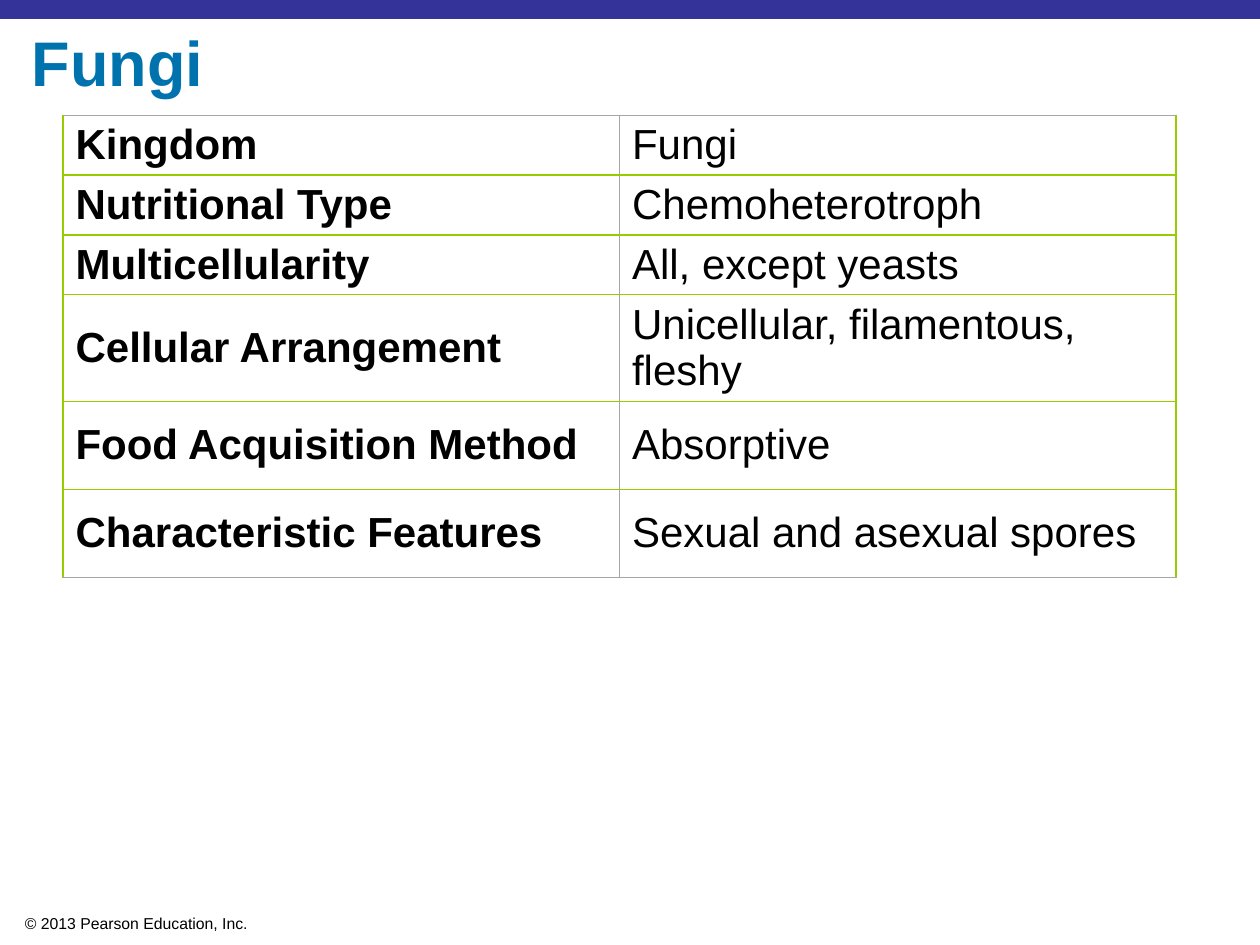
"""Build the Fungi slide: a top band, a title, a two-column table and a copyright line."""
from lxml.etree import SubElement
from pptx import Presentation
from pptx.dml.color import RGBColor
from pptx.enum.shapes import MSO_SHAPE
from pptx.enum.text import MSO_ANCHOR
from pptx.oxml.ns import qn
from pptx.util import Pt

PX = 914400 / 126
BAND = RGBColor(0x33, 0x33, 0x99)
BLUE = RGBColor(0x00, 0x73, 0xAE)
BLACK = RGBColor(0x00, 0x00, 0x00)
GREEN = RGBColor(0x99, 0xCC, 0x00)
GREY = RGBColor(0xA6, 0xA6, 0xA6)

ROWS = [
    ("Kingdom", "Fungi", 60),
    ("Nutritional Type", "Chemoheterotroph", 60),
    ("Multicellularity", "All, except yeasts", 59),
    ("Cellular Arrangement", "Unicellular, filamentous, fleshy", 107),
    ("Food Acquisition Method", "Absorptive", 88),
    ("Characteristic Features", "Sexual and asexual spores", 88),
]
TEXTS = [
    ("Fungi", (32, 32, 1197, 126), MSO_ANCHOR.TOP, 0.9,
     {"size": Pt(36), "bold": True, "color": BLUE}),
    ("© 2013 Pearson Education, Inc.", (25, 914, 1210, 19), MSO_ANCHOR.MIDDLE, 1.0,
     {"size": Pt(9), "bold": False, "color": BLACK}),
]
TABLE_LEFT, TABLE_TOP, COL_W = 63, 115, 556.5


def emu(*lengths):
    return [round(n * PX) for n in lengths]


def write(p, text, fmt):
    r = p.add_run()
    r.text = text
    r.font.name = "Arial"
    for key, value in fmt.items():
        if key == "color":
            r.font.color.rgb = value
        else:
            setattr(r.font, key, value)


def set_borders(cell, sides):
    tcPr = cell._tc.get_or_add_tcPr()
    for i, (side, color) in enumerate(sides.items()):
        width = Pt(1) if color == GREEN else Pt(0.5)
        ln = SubElement(tcPr, qn(f"a:ln{side}"), w=str(width))
        fill = SubElement(ln, qn("a:solidFill"))
        SubElement(fill, qn("a:srgbClr"), val=str(color))
        tcPr.insert(i, ln)


def add_table(s):
    height = sum(row[-1] for row in ROWS)
    box = emu(TABLE_LEFT, TABLE_TOP, 2 * COL_W, height)
    table = s.shapes.add_table(len(ROWS), 2, *box).table
    table.first_row = table.horz_banding = False
    for col in table.columns:
        col.width = emu(COL_W)[0]
    last = len(ROWS) - 1
    for i, (*texts, row_h) in enumerate(ROWS):
        table.rows[i].height = emu(row_h)[0]
        for j, text in enumerate(texts):
            cell = table.cell(i, j)
            cell.vertical_anchor = MSO_ANCHOR.MIDDLE
            cell.fill.background()
            write(cell.text_frame.paragraphs[0], text,
                  {"size": Pt(24), "bold": j == 0, "color": BLACK})
            set_borders(cell, {
                "L": GREEN if j == 0 else GREY,
                "R": GREEN if j == 1 else GREY,
                "T": GREY if i == 0 else GREEN,
                "B": GREY if i == last else GREEN,
            })


def add_text(s, text, box, anchor, spacing, fmt):
    tf = s.shapes.add_textbox(*emu(*box)).text_frame
    tf.word_wrap = True
    tf.vertical_anchor = anchor
    for side in ("left", "top", "right", "bottom"):
        setattr(tf, f"margin_{side}", 0)
    p = tf.paragraphs[0]
    p.line_spacing = spacing
    write(p, text, fmt)


def main():
    prs = Presentation()
    prs.slide_width, prs.slide_height = emu(1260, 945)
    s = prs.slides.add_slide(prs.slide_layouts[6])
    band = s.shapes.add_shape(MSO_SHAPE.RECTANGLE, *emu(0, 0, 1260, 19))
    band.shadow.inherit = False
    band.fill.solid()
    band.fill.fore_color.rgb = BAND
    band.line.fill.background()
    add_table(s)
    for item in TEXTS:
        add_text(s, *item)
    prs.save("out.pptx")


if __name__ == "__main__":
    main()
